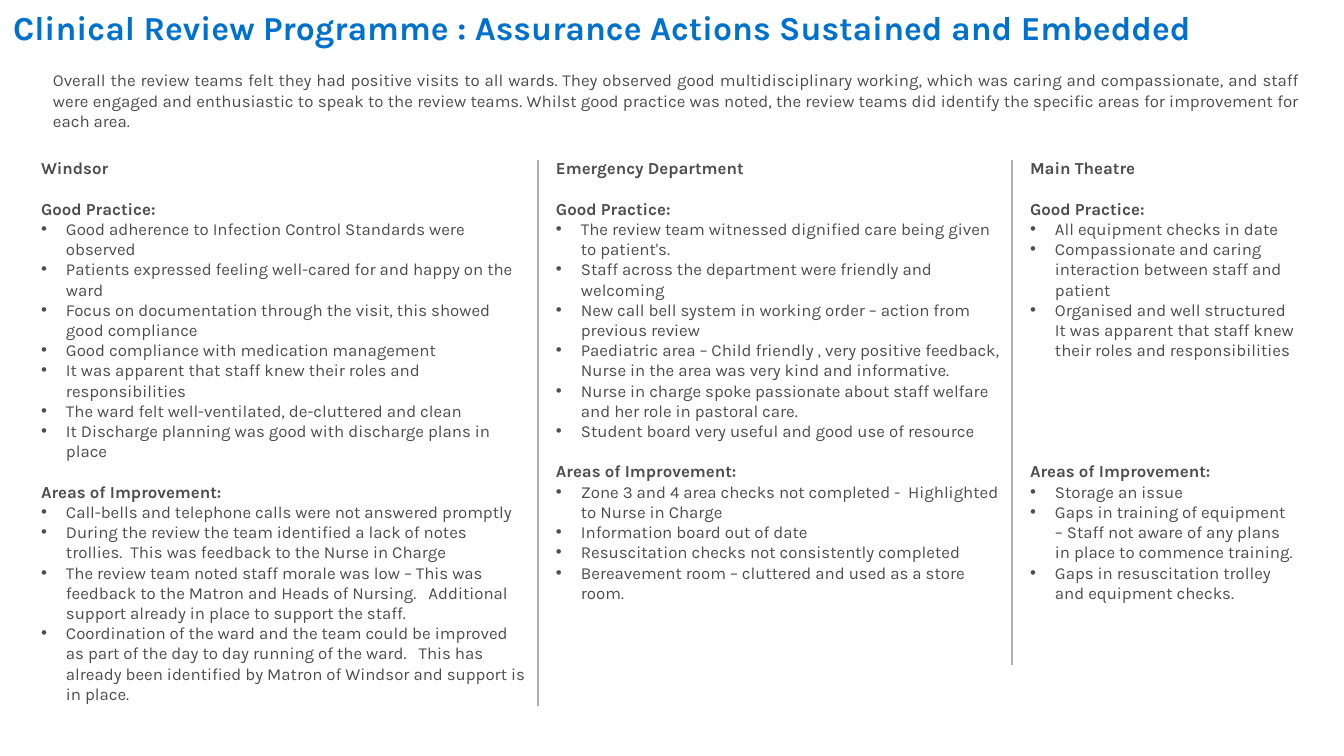
from lxml import etree
from pptx import Presentation
from pptx.dml.color import RGBColor
from pptx.enum.shapes import MSO_CONNECTOR
from pptx.enum.text import MSO_ANCHOR, MSO_AUTO_SIZE, PP_ALIGN
from pptx.oxml.ns import qn
from pptx.util import Pt

EMU_PER_PX = 914400 / 134.4
FONT = "Karla"
BLUE = RGBColor(0x00, 0x72, 0xCE)
GREY = RGBColor(0x4D, 0x4D, 0x4D)
RULE_GREY = RGBColor(0xAE, 0xAE, 0xAE)
LEFT, JUSTIFY = PP_ALIGN.LEFT, PP_ALIGN.JUSTIFY
TOP = MSO_ANCHOR.TOP
NO_AUTOFIT = MSO_AUTO_SIZE.NONE
STRAIGHT = MSO_CONNECTOR.STRAIGHT
BODY_SIZE = 9
LINE_HEIGHT = 10.83
HANGING = 25
COLUMN_TOP = 149
RULE_TOP = 160

TITLE = "Clinical Review Programme : Assurance Actions Sustained and Embedded"
OVERVIEW = (
    "Overall the review teams felt they had positive visits to all wards. They observed good "
    "multidisciplinary working, which was caring and compassionate, and staff were engaged and "
    "enthusiastic to speak to the review teams. Whilst good practice was noted, the review teams "
    "did identify the specific areas for improvement for each area."
)

# left, width, height, ward, good practice, lines before improvements, improvements
WARDS = [
    (23, 520, 567, "Windsor", [
        "Good adherence to Infection Control Standards were observed",
        "Patients expressed feeling well-cared for and happy on the ward",
        "Focus on documentation through the visit, this showed good compliance",
        "Good compliance with medication management",
        "It was apparent that staff knew their roles and responsibilities",
        "The ward felt well-ventilated, de-cluttered and clean",
        "It Discharge planning was good with discharge plans in place",
    ], 1, [
        "Call-bells and telephone calls were not answered promptly",
        "During the review the team identified a lack of notes trollies.  This was feedback to "
        "the Nurse in Charge",
        "The review team noted staff morale was low – This was feedback to the Matron and Heads "
        "of Nursing.   Additional support already in place to support the staff.",
        "Coordination of the ward and the team could be improved as part of the day to day "
        "running of the ward.   This has already been identified by Matron of Windsor and "
        "support is in place.",
    ]),
    (538, 481, 487, "Emergency Department", [
        "The review team witnessed dignified care being given to patient's.",
        "Staff across the department were friendly and welcoming",
        "New call bell system in working order – action from previous review",
        "Paediatric area – Child friendly , very positive feedback, Nurse in the area was very "
        "kind and informative.",
        "Nurse in charge spoke passionate about staff welfare and her role in pastoral care.",
        "Student board very useful and good use of resource",
    ], 1, [
        "Zone 3 and 4 area checks not completed -  Highlighted to Nurse in Charge",
        "Information board out of date",
        "Resuscitation checks not consistently completed",
        "Bereavement room – cluttered and used as a store room.",
    ]),
    (1012, 302, 507, "Main Theatre", [
        "All equipment checks in date",
        "Compassionate and caring interaction between staff and patient",
        "Organised and well structured It was apparent that staff knew their roles and "
        "responsibilities",
    ], 5, [
        "Storage an issue",
        "Gaps in training of equipment – Staff not aware of any plans in place to commence "
        "training.",
        "Gaps in resuscitation trolley and equipment checks.",
    ]),
]
RULES = [(538, 706), (1012, 665)]


def px(length):
    return round(length * EMU_PER_PX)


def style(paragraph, size=BODY_SIZE, color=GREY, bold=False, align=LEFT):
    paragraph.alignment = align
    font = paragraph.font
    font.name, font.size, font.bold = FONT, Pt(size), bold
    font.color.rgb = color


def set_frame(frame, side, edge):
    frame.word_wrap = True
    frame.auto_size = NO_AUTOFIT
    frame.vertical_anchor = TOP
    frame.margin_left = frame.margin_right = px(side)
    frame.margin_top = frame.margin_bottom = px(edge)


def add_title(slide):
    title = slide.shapes.title
    title.left, title.top, title.width, title.height = 0, 0, px(1344), px(62)
    set_frame(title.text_frame, 13, 7)
    title.text_frame.text = TITLE
    style(title.text_frame.paragraphs[0], 18, BLUE, True)


def add_text_box(slide, left, top, width, height, side, edge):
    box = slide.shapes.add_textbox(px(left), px(top), px(width), px(height))
    set_frame(box.text_frame, side, edge)
    return box.text_frame


def add_heading(frame, text, lines_before):
    heading = frame.add_paragraph()
    heading.text = text
    heading.space_before = Pt(lines_before * LINE_HEIGHT)
    style(heading, bold=True)


def add_bullets(frame, items):
    for item in items:
        paragraph = frame.add_paragraph()
        paragraph.text = item
        properties = paragraph._p.get_or_add_pPr()
        properties.set("marL", str(px(HANGING)))
        properties.set("indent", str(-px(HANGING)))
        etree.SubElement(properties, qn("a:buFont"), typeface="Arial")
        etree.SubElement(properties, qn("a:buChar"), char="•")
        style(paragraph)


def add_ward(slide, left, width, height, ward, good, lines_before, improvements):
    frame = add_text_box(slide, left, COLUMN_TOP, width, height, 18, 9)
    frame.text = ward
    style(frame.paragraphs[0], bold=True)
    add_heading(frame, "Good Practice:", 1)
    add_bullets(frame, good)
    add_heading(frame, "Areas of Improvement:", lines_before)
    add_bullets(frame, improvements)


def add_rule(slide, x, bottom):
    rule = slide.shapes.add_connector(STRAIGHT, px(x), px(RULE_TOP), px(x), px(bottom))
    rule.line.color.rgb = RULE_GREY
    rule.line.width = Pt(0.75)
    etree.SubElement(rule._element.spPr, qn("a:effectLst"))


def main():
    deck = Presentation()
    deck.slide_width, deck.slide_height = px(1344), px(756)
    slide = deck.slides.add_slide(deck.slide_layouts[5])
    add_title(slide)
    overview = add_text_box(slide, 40, 63, 1271, 75, 13, 7)
    overview.text = OVERVIEW
    style(overview.paragraphs[0], align=JUSTIFY)
    for ward in WARDS:
        add_ward(slide, *ward)
    for x, bottom in RULES:
        add_rule(slide, x, bottom)
    deck.save("out.pptx")


if __name__ == "__main__":
    main()
